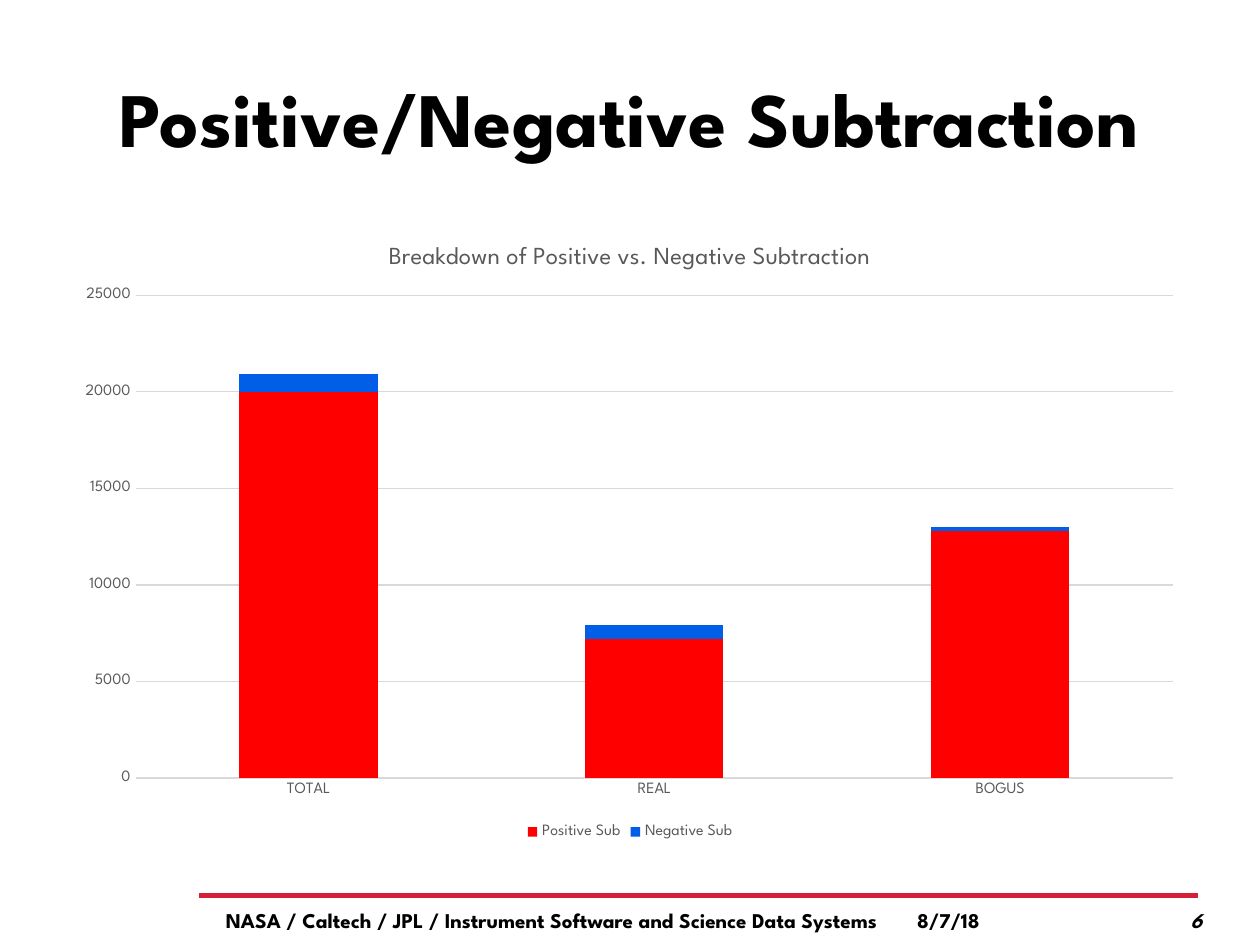
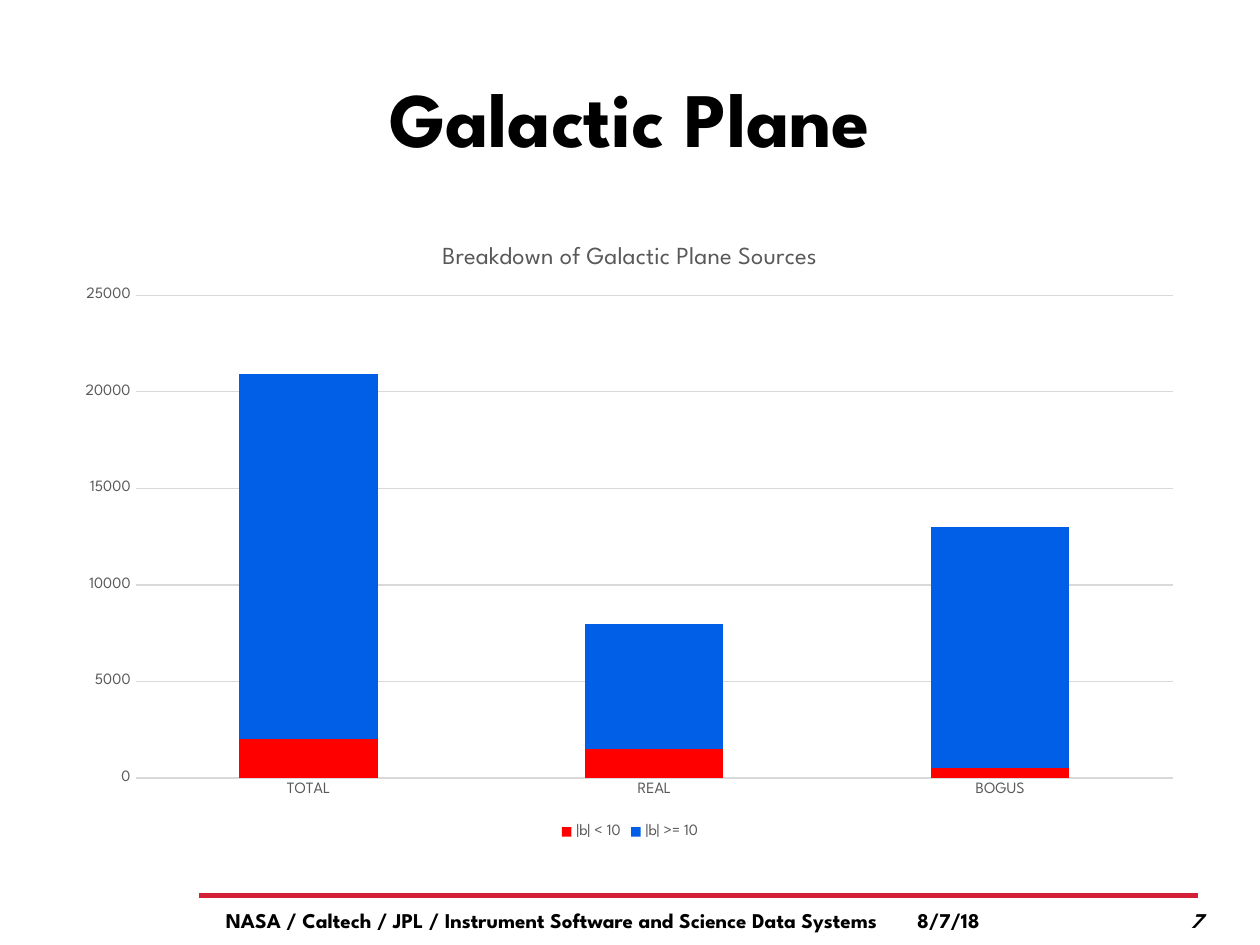
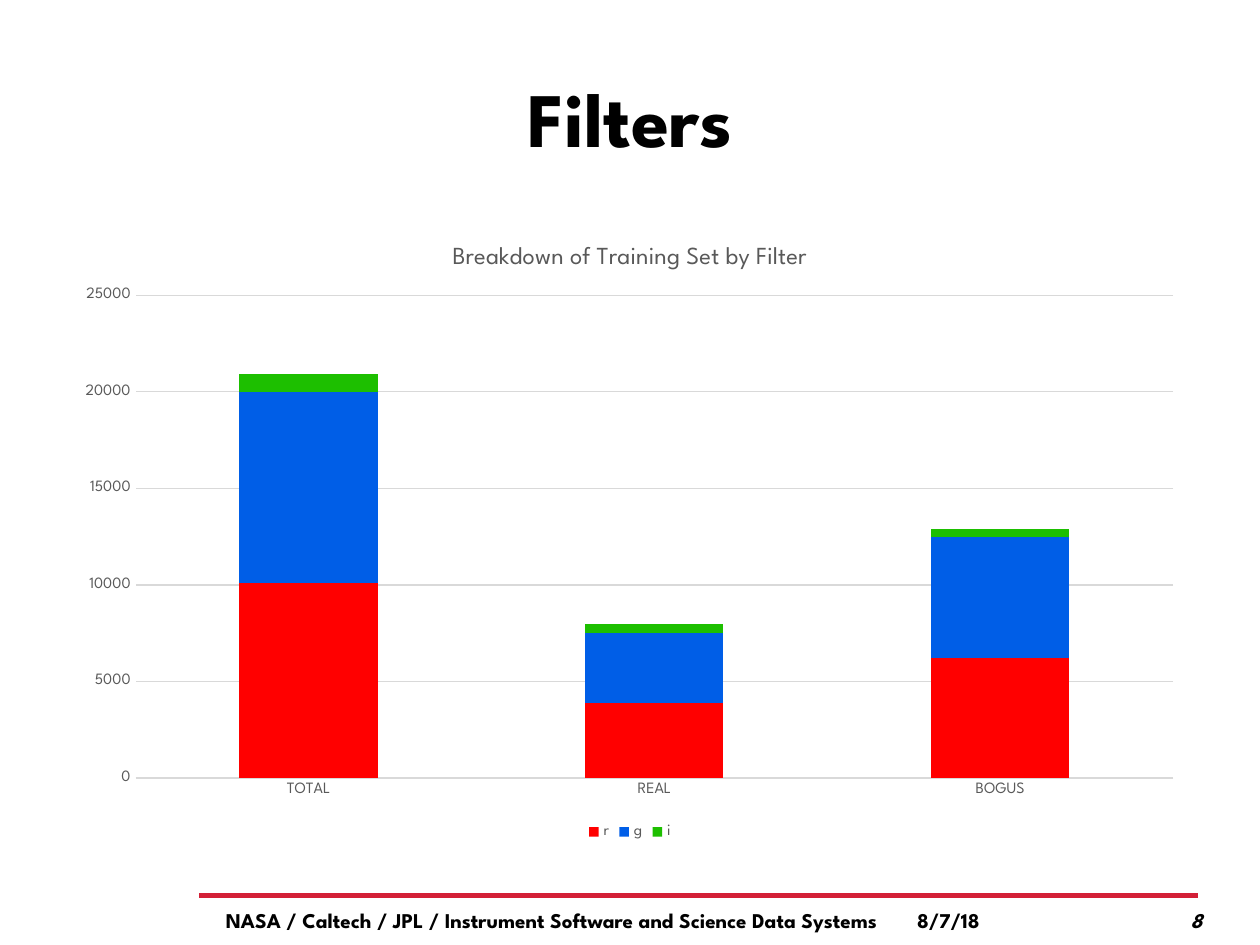
from dataclasses import dataclass

from lxml import etree
from pptx import Presentation
from pptx.chart.data import CategoryChartData
from pptx.dml.color import RGBColor
from pptx.enum.chart import XL_CHART_TYPE, XL_LEGEND_POSITION, XL_TICK_MARK
from pptx.enum.shapes import MSO_CONNECTOR
from pptx.enum.text import MSO_ANCHOR, PP_ALIGN
from pptx.oxml.ns import qn
from pptx.util import Pt

STACKED = XL_CHART_TYPE.COLUMN_STACKED
BOTTOM = XL_LEGEND_POSITION.BOTTOM
NO_TICK = XL_TICK_MARK.NONE
STRAIGHT = MSO_CONNECTOR.STRAIGHT
MIDDLE = MSO_ANCHOR.MIDDLE
LEFT, CENTER, RIGHT = PP_ALIGN.LEFT, PP_ALIGN.CENTER, PP_ALIGN.RIGHT

PX = 9144  # EMU in one px, 100 px to the inch
TITLE_ONLY = 5


@dataclass(frozen=True)
class Theme:
    face: str = "League Spartan"
    ink: str = "000000"
    gray: str = "595959"
    grid: str = "D9D9D9"
    rule: str = "D32037"
    fills: tuple = ("FF0000", "005EE7", "1DBF00")
    title: int = 44
    foot: int = 12
    head: int = 14
    base: int = 10
    label: int = 9


def emu(*sizes):
    return [size * PX for size in sizes]


def apply(item, **values):
    for name, value in values.items():
        setattr(item, name, value)


class Deck:
    def __init__(self, theme):
        self.theme = theme
        self.file = Presentation()
        self.file.slide_width, self.file.slide_height = emu(1000, 750)
        self.slide = None

    def font(self, font, size, color, **values):
        apply(font, name=self.theme.face, size=Pt(size), **values)
        font.color.rgb = RGBColor.from_string(color)

    def stroke(self, line, color, width):
        line.color.rgb = RGBColor.from_string(color)
        line.width = Pt(width)

    def fill_text(self, shape, text, size, align, **values):
        frame = shape.text_frame
        apply(frame, text=text, word_wrap=True, vertical_anchor=MIDDLE)
        para = frame.paragraphs[0]
        para.alignment = align
        self.font(para.runs[0].font, size, self.theme.ink, bold=True, **values)

    def title(self, text):
        shape = self.slide.shapes.title
        box = zip(("left", "top", "width", "height"), emu(50, 30, 900, 125))
        apply(shape, **dict(box))
        self.fill_text(shape, text, self.theme.title, CENTER)

    def label(self, box, text, align, **values):
        shape = self.slide.shapes.add_textbox(*emu(*box))
        self.fill_text(shape, text, self.theme.foot, align, **values)

    def line(self, *ends):
        line = self.slide.shapes.add_connector(STRAIGHT, *emu(*ends))
        self.stroke(line.line, self.theme.rule, 3)
        etree.SubElement(line._element.spPr, qn("a:effectLst"))

    def footer(self, page):
        self.line(158, 711, 951, 711)
        self.label((718, 710, 233, 40), "8/7/18", LEFT)
        self.label((135, 710, 606, 40),
                   "NASA / Caltech / JPL / Instrument Software and Science Data Systems",
                   CENTER)
        self.label((731, 710, 233, 40), str(page), RIGHT, italic=True)

    def start(self, title, page):
        layout = self.file.slide_layouts[TITLE_ONLY]
        self.slide = self.file.slides.add_slide(layout)
        self.title(title)
        self.footer(page)

    def chart(self, title, cats, series):
        look = self.theme
        data = CategoryChartData()
        data.categories = cats
        for name, values in series.items():
            data.add_series(name, values)
        box = emu(50, 175, 900, 495)
        chart = self.slide.shapes.add_chart(STACKED, *box, data).chart
        self.font(chart.font, look.base, look.ink)

        # Heading and legend
        chart.has_title = True
        frame = chart.chart_title.text_frame
        frame.text = title
        self.font(frame.paragraphs[0].runs[0].font, look.head, look.gray, bold=False)
        chart.has_legend = True
        apply(chart.legend, position=BOTTOM, include_in_layout=False)
        self.font(chart.legend.font, look.label, look.gray)

        # Axes
        for axis in (chart.category_axis, chart.value_axis):
            apply(axis, major_tick_mark=NO_TICK, minor_tick_mark=NO_TICK)
            self.font(axis.tick_labels.font, look.label, look.gray)
        self.stroke(chart.category_axis.format.line, look.grid, 0.75)
        scale = chart.value_axis
        apply(scale, minimum_scale=0, maximum_scale=25000, major_unit=5000,
              has_major_gridlines=True)
        scale.format.line.fill.background()
        self.stroke(scale.major_gridlines.format.line, look.grid, 0.75)

        # Bars
        plot = chart.plots[0]
        apply(plot, gap_width=150, overlap=100, vary_by_categories=False)
        for bars, color in zip(plot.series, look.fills):
            bars.format.fill.solid()
            bars.format.fill.fore_color.rgb = RGBColor.from_string(color)
        self.place(chart, 0.064, 0.12, 0.915, 0.774)

    def place(self, chart, *parts):
        """Fix the inner plot area, as shares of the chart."""
        area = chart._chartSpace.chart.plotArea
        for old in area.findall(qn("c:layout")):
            area.remove(old)
        layout = etree.Element(qn("c:layout"))
        area.insert(0, layout)
        manual = etree.SubElement(layout, qn("c:manualLayout"))
        marks = {"layoutTarget": "inner", "xMode": "edge", "yMode": "edge"}
        marks.update(zip("xywh", parts))
        for tag, value in marks.items():
            etree.SubElement(manual, qn("c:" + tag)).set("val", str(value))


CATS = ("TOTAL", "REAL", "BOGUS")
FIRST = 6  # number of the first page
PAGES = (
    ("Positive/Negative Subtraction",
     "Breakdown of Positive vs. Negative Subtraction",
     {"Positive Sub": (20000, 7200, 12800), "Negative Sub": (900, 700, 200)}),
    ("Galactic Plane",
     "Breakdown of Galactic Plane Sources",
     {"|b| < 10": (2000, 1500, 500), "|b| >= 10": (18900, 6500, 12500)}),
    ("Filters",
     "Breakdown of Training Set by Filter",
     {"r": (10100, 3900, 6200), "g": (9900, 3600, 6300), "i": (900, 500, 400)}),
)


def main():
    deck = Deck(Theme())
    for page, (title, head, series) in enumerate(PAGES, FIRST):
        deck.start(title, page)
        deck.chart(head, CATS, series)
    deck.file.save("out.pptx")


if __name__ == "__main__":
    main()
